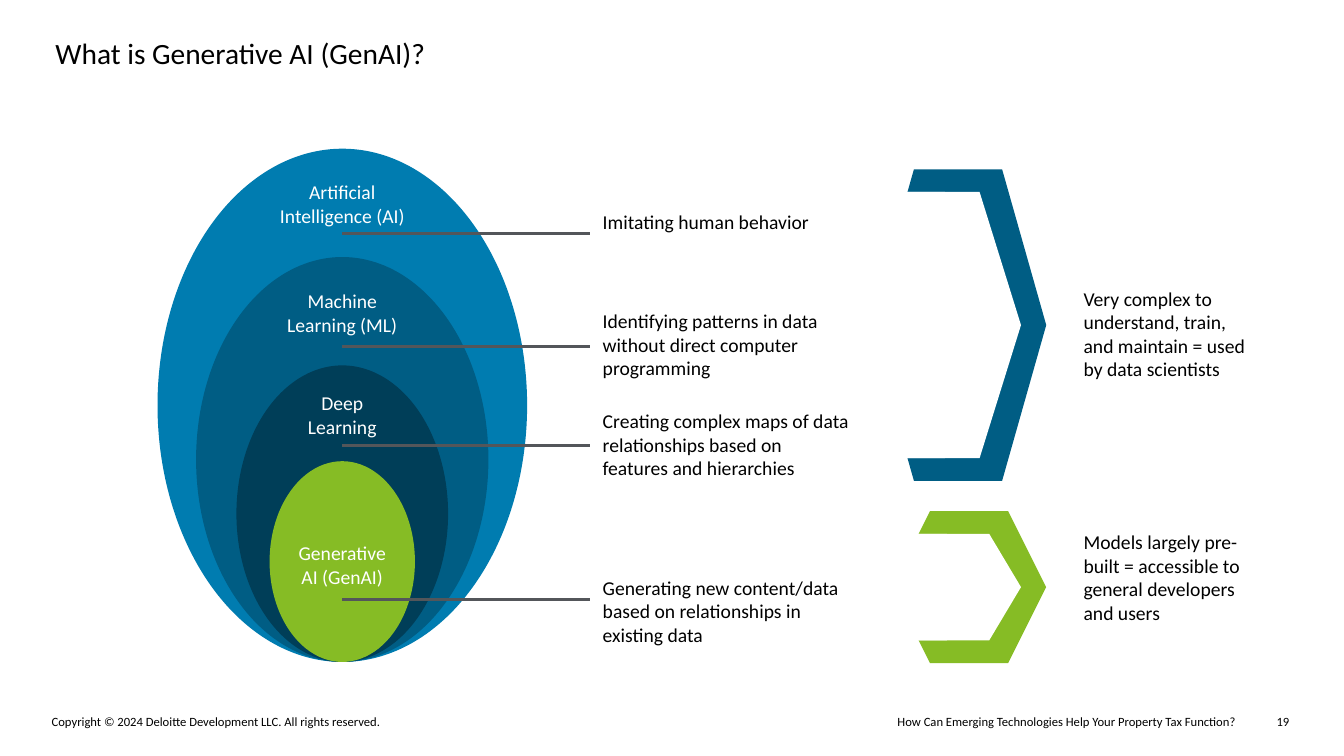
from lxml.etree import SubElement
from pptx import Presentation
from pptx.dml.color import RGBColor
from pptx.enum.shapes import MSO_CONNECTOR, MSO_SHAPE
from pptx.enum.text import MSO_ANCHOR, PP_ALIGN
from pptx.oxml.ns import qn
from pptx.util import Inches, Pt

WIDE, HIGH = Inches(13.333), Inches(7.5)
COLS, ROWS = 160, 90
BLACK, WHITE, GRAY = "000000", "FFFFFF", "53565A"
BLUE, TEAL, NAVY, GREEN = "007CB0", "005D84", "003E58", "86BC25"
AXIS, BASE = 40.75, 78.8  # shared centre column and bottom row of the ovals
TIP = 124.55              # column where both brackets point

# fill, oval width, oval height, label lines, label row, line row, note row, note
LAYERS = [
    (BLUE, 44, 61.1, ["Artificial", "Intelligence (AI)"], 21.45, 27.85, 25,
     "Imitating human behavior"),
    (TEAL, 34.8, 48.2, ["Machine", "Learning (ML)"], 34.45, 41.3, 36.8,
     "Identifying patterns in data without direct computer programming"),
    (NAVY, 25.2, 35.3, ["Deep", "Learning"], 46.55, 53.05, 48.7,
     "Creating complex maps of data relationships based on features and hierarchies"),
    (GREEN, 17.3, 23.9, ["Generative", "AI (GenAI)"], None, 71.4, 68.55,
     "Generating new content/data based on relationships in existing data"),
]

# fill, top row, width, height, note row, note
GROUPS = [
    (TEAL, 20.15, 21, 37.1, 34.1,
     "Very complex to understand, train, and maintain = used by data scientists"),
    (GREEN, 60.85, 18.35, 18.1, 63.1,
     "Models largely pre-built = accessible to general developers and users"),
]


def paint(target, tone):
    """Give a fill, line or font colour format a hex colour."""
    target.rgb = RGBColor.from_string(tone)


def grid(col, row, wide, high):
    """Turn grid columns and rows into slide lengths."""
    return (round(col * WIDE / COLS), round(row * HIGH / ROWS),
            round(wide * WIDE / COLS), round(high * HIGH / ROWS))


def write(frame, lines, size=14, tone=BLACK, align=PP_ALIGN.LEFT, wrap=True,
          anchor=MSO_ANCHOR.TOP):
    frame.word_wrap = wrap
    frame.vertical_anchor = anchor
    frame.margin_left = frame.margin_right = 0
    frame.margin_top = frame.margin_bottom = 0
    for i, line in enumerate(lines):
        para = frame.add_paragraph() if i else frame.paragraphs[0]
        para.alignment = align
        run = para.add_run()
        run.text = line
        run.font.name = "Calibri"
        run.font.size = Pt(size)
        paint(run.font.color, tone)


def add_text(slide, box, lines, **style):
    write(slide.shapes.add_textbox(*grid(*box)).text_frame, lines, **style)


def add_form(slide, kind, box, tone):
    form = slide.shapes.add_shape(kind, *grid(*box))
    form.shadow.inherit = False
    form.fill.solid()
    paint(form.fill.fore_color, tone)
    form.line.fill.background()
    return form


def add_rule(slide, start, end, row):
    x1, y, x2, _ = grid(start, row, end, 0)
    rule = slide.shapes.add_connector(MSO_CONNECTOR.STRAIGHT, x1, y, x2, y)
    rule.line.width = Pt(2)
    paint(rule.line.color, GRAY)
    SubElement(rule._element.spPr, qn("a:effectLst"))


def add_brace(slide, top, wide, high, tone):
    """Draw a hexagon hollowed by white arrows so a bracket remains."""
    edge = 2.7
    add_form(slide, MSO_SHAPE.HEXAGON, (TIP - wide, top, wide, high), tone)
    for col, span in ((105, 16.55), (103, 13.5)):
        box = (col, top + edge, span, high - 2 * edge)
        gap = add_form(slide, MSO_SHAPE.PENTAGON, box, WHITE)
        gap.adjustments[0] = 0.298


def add_layers(slide):
    label = dict(tone=WHITE, align=PP_ALIGN.CENTER, wrap=False)
    for tone, wide, high, lines, row, *_ in LAYERS:
        box = (AXIS - wide / 2, BASE - high, wide, high)
        oval = add_form(slide, MSO_SHAPE.OVAL, box, tone)
        if row is None:
            write(oval.text_frame, lines, anchor=MSO_ANCHOR.MIDDLE, **label)
            oval.text_frame.margin_top = Inches(0.1)
            oval.text_frame.margin_bottom = Inches(0.04)
    for _, _, _, lines, row, rule, top, note in LAYERS:
        add_rule(slide, 70.2, AXIS, rule)
        add_text(slide, (71.75, top, 29.4, 9.2), [note])
        if row is not None:
            add_text(slide, (AXIS - 7.5, row, 15, 5.6), lines, **label)


def add_groups(slide):
    for tone, top, wide, high, row, note in GROUPS:
        add_brace(slide, top, wide, high, tone)
        add_text(slide, (129, row, 21, 13), [note])


def add_foot(slide):
    right = PP_ALIGN.RIGHT
    add_text(slide, (6.15, 85, 70.3, 1.8),
             ["Copyright © 2024 Deloitte Development LLC. All rights reserved."], size=9)
    add_text(slide, (83.2, 85, 63.85, 1.8),
             ["How Can Emerging Technologies Help Your Property Tax Function?"],
             size=9, align=right)
    add_text(slide, (149.4, 85, 4.1, 1.8), ["19"], size=9, align=right)


def main():
    deck = Presentation()
    deck.slide_width, deck.slide_height = WIDE, HIGH
    slide = deck.slides.add_slide(deck.slide_layouts[5])
    title = slide.shapes.title
    title.left, title.top, title.width, title.height = grid(6.6, 4.2, 146.9, 4.1)
    write(title.text_frame, ["What is Generative AI (GenAI)?"], size=21)
    add_groups(slide)
    add_layers(slide)
    add_foot(slide)
    deck.save("out.pptx")


if __name__ == "__main__":
    main()
